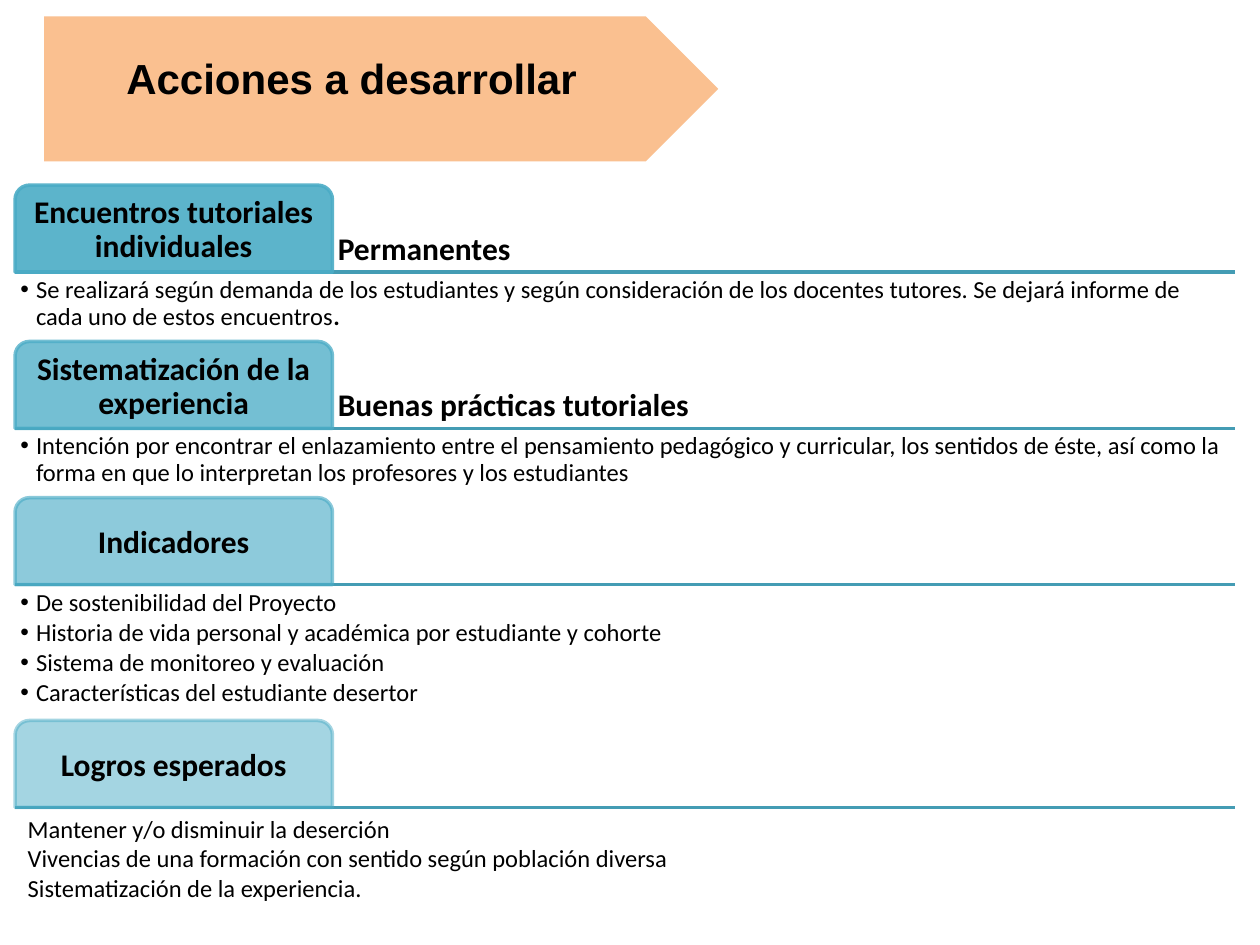
import lxml.etree
import pptx
import pptx.dml.color
import pptx.enum.shapes
import pptx.enum.text
import pptx.oxml.ns
import pptx.util

Pt = pptx.util.Pt
RGBColor = pptx.dml.color.RGBColor
SHAPE = pptx.enum.shapes.MSO_SHAPE
ALIGN = pptx.enum.text.PP_ALIGN
ANCHOR = pptx.enum.text.MSO_ANCHOR
qn = pptx.oxml.ns.qn

BLACK = RGBColor(0x00, 0x00, 0x00)
ORANGE = RGBColor(0xFA, 0xC0, 0x90)
TEAL = RGBColor(0x4B, 0xAC, 0xC6)
DARK_TEAL = RGBColor(0x44, 0x9C, 0xB4)

LEFT, RIGHT = 8.6, 706
FIRST_TOP = 105.8
TAB_WIDTH, TAB_HEIGHT = 181.4, 49.7
SECTION_GAP = 2.2
INSET = 3

SECTIONS = [
    dict(heading="Encuentros tutoriales individuales", subheading="Permanentes",
         opacity=90, list_height=37.4, bold_tail=".",
         items=["Se realizará según demanda de los estudiantes y según consideración "
                "de los docentes tutores. Se dejará informe de cada uno de estos encuentros"]),
    dict(heading="Sistematización de la experiencia", subheading="Buenas prácticas tutoriales",
         opacity=77, list_height=37.4,
         items=["Intención por encontrar el enlazamiento entre el pensamiento pedagógico "
                "y curricular, los sentidos de éste, así como la forma en que lo "
                "interpretan los profesores y los estudiantes"]),
    dict(heading="Indicadores", opacity=63, list_height=75.4,
         items=["De sostenibilidad del Proyecto",
                "Historia de vida personal y académica por estudiante y cohorte",
                "Sistema de monitoreo y evaluación",
                "Características del estudiante desertor"]),
    dict(heading="Logros esperados", opacity=50, list_height=58.3, bulleted=False,
         items=["Mantener y/o disminuir la deserción",
                "Vivencias de una formación con sentido según población diversa",
                "Sistematización de la experiencia."]),
]


def place(shape, left, top, width, height):
    shape.left, shape.top = Pt(left), Pt(top)
    shape.width, shape.height = Pt(width), Pt(height)


def set_bullet(paragraph, bulleted):
    properties = paragraph._p.get_or_add_pPr()
    indent = Pt(9) if bulleted else 0
    properties.set("marL", str(indent))
    properties.set("indent", str(-indent))
    if bulleted:
        font = lxml.etree.SubElement(properties, qn("a:buFont"))
        font.set("typeface", "Arial")
        lxml.etree.SubElement(properties, qn("a:buChar")).set("char", "•")
    else:
        lxml.etree.SubElement(properties, qn("a:buNone"))


def write_text(frame, lines, size=18, font="Calibri", bold=True, align=ALIGN.LEFT,
               anchor=ANCHOR.TOP, margins=(INSET, INSET), spacing=0.9, after=0,
               bulleted=False, bold_tail="", wrap=True):
    frame.auto_size = pptx.enum.text.MSO_AUTO_SIZE.NONE
    frame.word_wrap = wrap
    frame.vertical_anchor = anchor
    frame.margin_left = frame.margin_right = Pt(margins[0])
    frame.margin_top = frame.margin_bottom = Pt(margins[1])
    for index, line in enumerate(lines):
        paragraph = frame.add_paragraph() if index else frame.paragraphs[0]
        set_bullet(paragraph, bulleted)
        paragraph.alignment = align
        paragraph.line_spacing = spacing
        paragraph.space_before = Pt(0)
        paragraph.space_after = Pt(after)
        for text, is_bold in ((line, bold), (bold_tail, True)):
            if text:
                run = paragraph.add_run()
                run.text = text
                run.font.name, run.font.size = font, Pt(size)
                run.font.bold = is_bold
                run.font.color.rgb = BLACK


def add_title(slide):
    title = slide.shapes.title
    place(title, 25.2, 26.6, 351.4, 36)
    write_text(title.text_frame, ["Acciones a desarrollar"], size=24, font="Arial",
               align=ALIGN.CENTER, margins=(7.2, 3.6), spacing=1)
    banner = slide.shapes.add_shape(SHAPE.PENTAGON, Pt(25.2), Pt(9.4), Pt(385.2), Pt(82.8))
    banner.shadow.inherit = False
    banner.fill.solid()
    banner.fill.fore_color.rgb = ORANGE
    banner.line.fill.background()
    title.element.addprevious(banner.element)


def add_rule(slide, top):
    rule = slide.shapes.add_connector(pptx.enum.shapes.MSO_CONNECTOR.STRAIGHT,
                                      Pt(LEFT), Pt(top), Pt(RIGHT), Pt(top))
    rule.line.color.rgb = DARK_TEAL
    rule.line.width = Pt(2)
    lxml.etree.SubElement(rule.element.spPr, qn("a:effectLst"))


def add_tab(slide, top, heading, opacity):
    tab = slide.shapes.add_shape(SHAPE.ROUND_2_SAME_RECTANGLE, Pt(LEFT), Pt(top),
                                 Pt(TAB_WIDTH), Pt(TAB_HEIGHT))
    tab.adjustments[0] = 0.167
    tab.shadow.inherit = False
    tab.fill.solid()
    tab.fill.fore_color.rgb = TEAL
    tab.line.color.rgb = TEAL
    tab.line.width = Pt(2)
    for color in tab.element.spPr.iter(qn("a:srgbClr")):
        lxml.etree.SubElement(color, qn("a:alpha")).set("val", str(opacity * 1000))
    write_text(tab.text_frame, [heading], align=ALIGN.CENTER, anchor=ANCHOR.MIDDLE)


def add_subheading(slide, top, subheading):
    left = LEFT + TAB_WIDTH
    box = slide.shapes.add_textbox(Pt(left), Pt(top), Pt(RIGHT - left), Pt(TAB_HEIGHT))
    write_text(box.text_frame, [subheading], anchor=ANCHOR.BOTTOM)


def fill_list(body, top, section):
    if section.get("bulleted", True):
        place(body, LEFT, top, RIGHT - LEFT, section["list_height"])
        write_text(body.text_frame, section["items"], size=14, bold=False, after=2,
                   bulleted=True, bold_tail=section.get("bold_tail", ""))
    else:
        place(body, LEFT, top, 383.8, section["list_height"])
        write_text(body.text_frame, section["items"], size=14, bold=False,
                   margins=(7.2, 3.6), spacing=1, wrap=False)


def main():
    presentation = pptx.Presentation()
    presentation.slide_width, presentation.slide_height = Pt(720), Pt(540)
    comparison_layout = presentation.slide_layouts[4]
    slide = presentation.slides.add_slide(comparison_layout)
    add_title(slide)
    bodies = [body for body in slide.placeholders if body.placeholder_format.idx]
    top = FIRST_TOP
    for section, body in zip(SECTIONS, bodies):
        list_top = top + TAB_HEIGHT
        add_rule(slide, list_top)
        add_tab(slide, top, section["heading"], section["opacity"])
        if "subheading" in section:
            add_subheading(slide, top, section["subheading"])
        fill_list(body, list_top, section)
        top = list_top + section["list_height"] + SECTION_GAP
    presentation.save("out.pptx")


if __name__ == "__main__":
    main()
